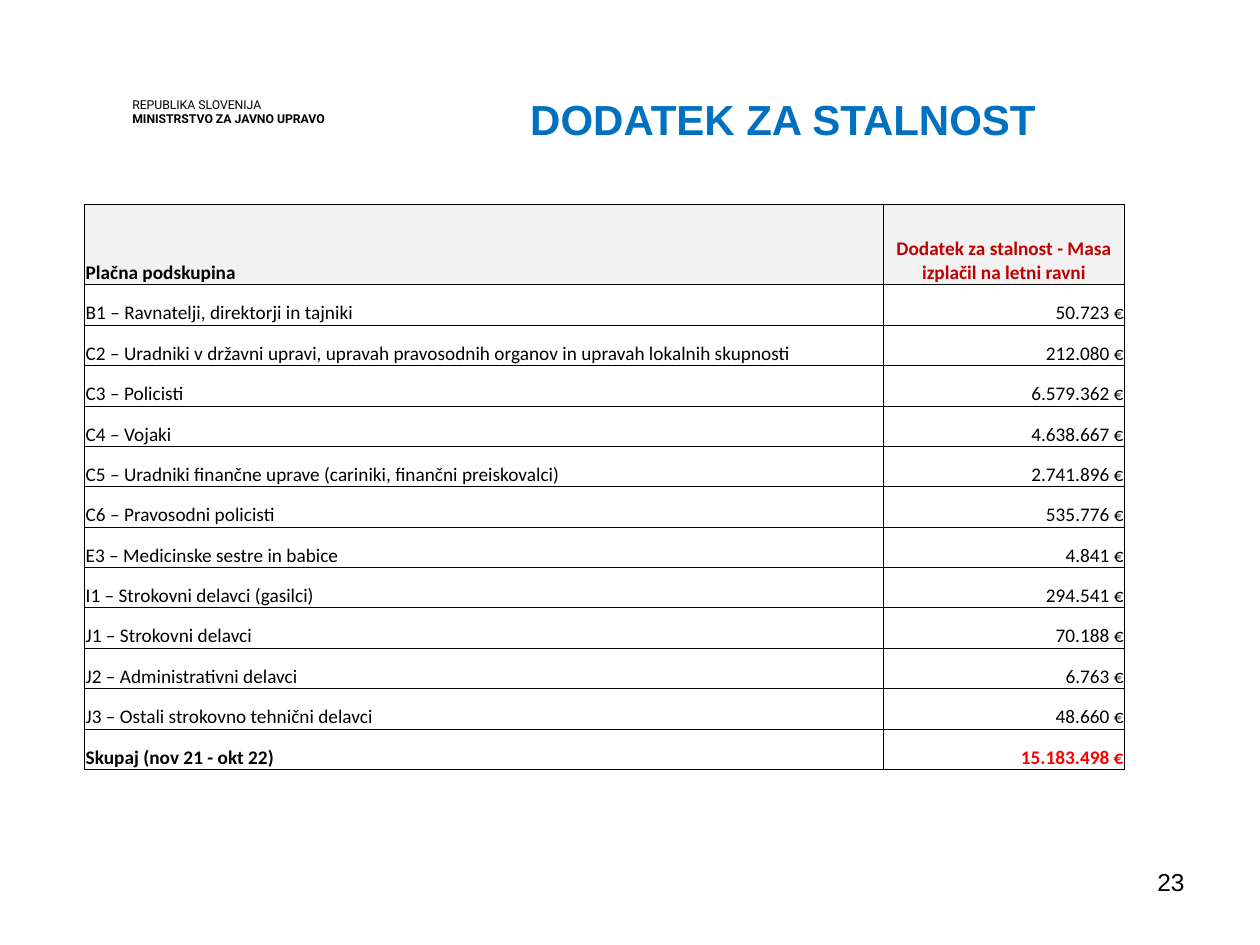
from typing import NamedTuple

from lxml.etree import SubElement
from pptx import Presentation
from pptx.dml.color import RGBColor
from pptx.enum.text import MSO_ANCHOR as Anchor, PP_ALIGN as Align
from pptx.oxml.ns import qn
from pptx.util import Pt

BLACK, BLUE, DARK_RED, RED, GREY = "000000", "0070C0", "C00000", "FF0000", "F2F2F2"
TABLE_LEFT, TABLE_TOP = 48.3, 116.6
COLUMN_WIDTHS = (456.3, 138.2)
HEADER_HEIGHT, ROW_HEIGHT = 46.2, 23.1


class Style(NamedTuple):
    font: str
    size: float
    color: str = BLACK
    bold: bool = False
    align: Align = Align.LEFT


class Label(NamedTuple):
    left: float
    top: float
    width: float
    height: float
    lines: tuple
    inset_x: float = 7.2
    inset_y: float = 3.6
    anchor: Anchor = Anchor.TOP
    spacing: float | None = None
    indent: float = 0


class Row(NamedTuple):
    group: str
    amount: str
    group_bold: bool = False
    amount_bold: bool = False
    amount_color: str = BLACK
    amount_align: Align = Align.RIGHT
    fill: str | None = None


LABELS = (
    Label(75.6, 55.4, 152.6, 16.8,
          (("REPUBLIKA SLOVENIJA", Style("Roboto", 7)),
           ("MINISTRSTVO ZA JAVNO UPRAVO", Style("Roboto", 7, bold=True))),
          inset_x=0, inset_y=0, spacing=8.4),
    Label(223.9, 49, 414, 37.4,
          (("DODATEK ZA STALNOST", Style("Arial", 24, BLUE, True)),),
          anchor=Anchor.MIDDLE, indent=72),
    Label(516.2, 491.8, 167.8, 37.4,
          (("23", Style("Arial", 14, align=Align.RIGHT)),)),
)

ROWS = (
    Row("Plačna podskupina", "Dodatek za stalnost - Masa izplačil na letni ravni",
        True, True, DARK_RED, Align.CENTER, GREY),
    Row("B1 – Ravnatelji, direktorji in tajniki", "50.723 €"),
    Row("C2 – Uradniki v državni upravi, upravah pravosodnih organov in upravah lokalnih skupnosti",
        "212.080 €"),
    Row("C3 – Policisti", "6.579.362 €"),
    Row("C4 – Vojaki", "4.638.667 €"),
    Row("C5 – Uradniki finančne uprave (cariniki, finančni preiskovalci)", "2.741.896 €"),
    Row("C6 – Pravosodni policisti", "535.776 €"),
    Row("E3 – Medicinske sestre in babice", "4.841 €"),
    Row("I1 – Strokovni delavci (gasilci)", "294.541 €"),
    Row("J1 – Strokovni delavci", "70.188 €"),
    Row("J2 – Administrativni delavci", "6.763 €"),
    Row("J3 – Ostali strokovno tehnični delavci", "48.660 €"),
    Row("Skupaj (nov 21 - okt 22)", "15.183.498 €", True, True, RED),
)


def set_all(target, values: dict) -> None:
    for name, value in values.items():
        setattr(target, name, value)


def paint(color_format, color: str) -> None:
    color_format.rgb = RGBColor.from_string(color)


def write(para, text: str, style: Style) -> None:
    para.alignment = style.align
    span = para.add_run()
    span.text = text
    set_all(span.font, {"name": style.font, "size": Pt(style.size), "bold": style.bold})
    paint(span.font.color, style.color)


def add_label(page, label: Label) -> None:
    box = page.shapes.add_textbox(*map(Pt, label[:4]))
    frame = box.text_frame
    set_all(frame, {
        "word_wrap": True, "vertical_anchor": label.anchor,
        "margin_left": Pt(label.inset_x), "margin_right": Pt(label.inset_x),
        "margin_top": Pt(label.inset_y), "margin_bottom": Pt(label.inset_y),
    })
    for index, (text, style) in enumerate(label.lines):
        para = frame.add_paragraph() if index else frame.paragraphs[0]
        if label.spacing:
            para.line_spacing = Pt(label.spacing)
        if label.indent:
            para._p.get_or_add_pPr().set("marL", str(Pt(label.indent)))
        write(para, text, style)


def add_borders(cell) -> None:
    properties = cell._tc.get_or_add_tcPr()
    for side in ("a:lnL", "a:lnR", "a:lnT", "a:lnB"):
        line = SubElement(properties, qn(side), w=str(Pt(0.5)))
        SubElement(SubElement(line, qn("a:solidFill")), qn("a:srgbClr"), val=BLACK)


def fill_cell(cell, text: str, style: Style, fill: str | None) -> None:
    set_all(cell, {
        "vertical_anchor": Anchor.BOTTOM, "margin_left": Pt(0.7),
        "margin_right": Pt(0.7), "margin_top": Pt(0.7), "margin_bottom": Pt(0),
    })
    add_borders(cell)
    if fill:
        cell.fill.solid()
        paint(cell.fill.fore_color, fill)
    else:
        cell.fill.background()
    write(cell.text_frame.paragraphs[0], text, style)


def add_pay_table(page) -> None:
    heights = [HEADER_HEIGHT] + [ROW_HEIGHT] * (len(ROWS) - 1)
    table = page.shapes.add_table(
        len(ROWS), len(COLUMN_WIDTHS), Pt(TABLE_LEFT), Pt(TABLE_TOP),
        Pt(sum(COLUMN_WIDTHS)), Pt(sum(heights))).table
    set_all(table, {"first_row": False, "horz_banding": False})
    for column, width in zip(table.columns, COLUMN_WIDTHS):
        column.width = Pt(width)
    for index, (row, height) in enumerate(zip(ROWS, heights)):
        table.rows[index].height = Pt(height)
        group_style = Style("Calibri", 11, bold=row.group_bold)
        amount_style = Style("Calibri", 11, row.amount_color, row.amount_bold, row.amount_align)
        fill_cell(table.cell(index, 0), row.group, group_style, row.fill)
        fill_cell(table.cell(index, 1), row.amount, amount_style, row.fill)


def main() -> None:
    """Build the slide on the permanence allowance by pay subgroup."""
    deck = Presentation()
    set_all(deck, {"slide_width": Pt(720), "slide_height": Pt(540)})
    page = deck.slides.add_slide(deck.slide_layouts[6])
    for label in LABELS:
        add_label(page, label)
    add_pay_table(page)
    deck.save("out.pptx")


if __name__ == "__main__":
    main()
